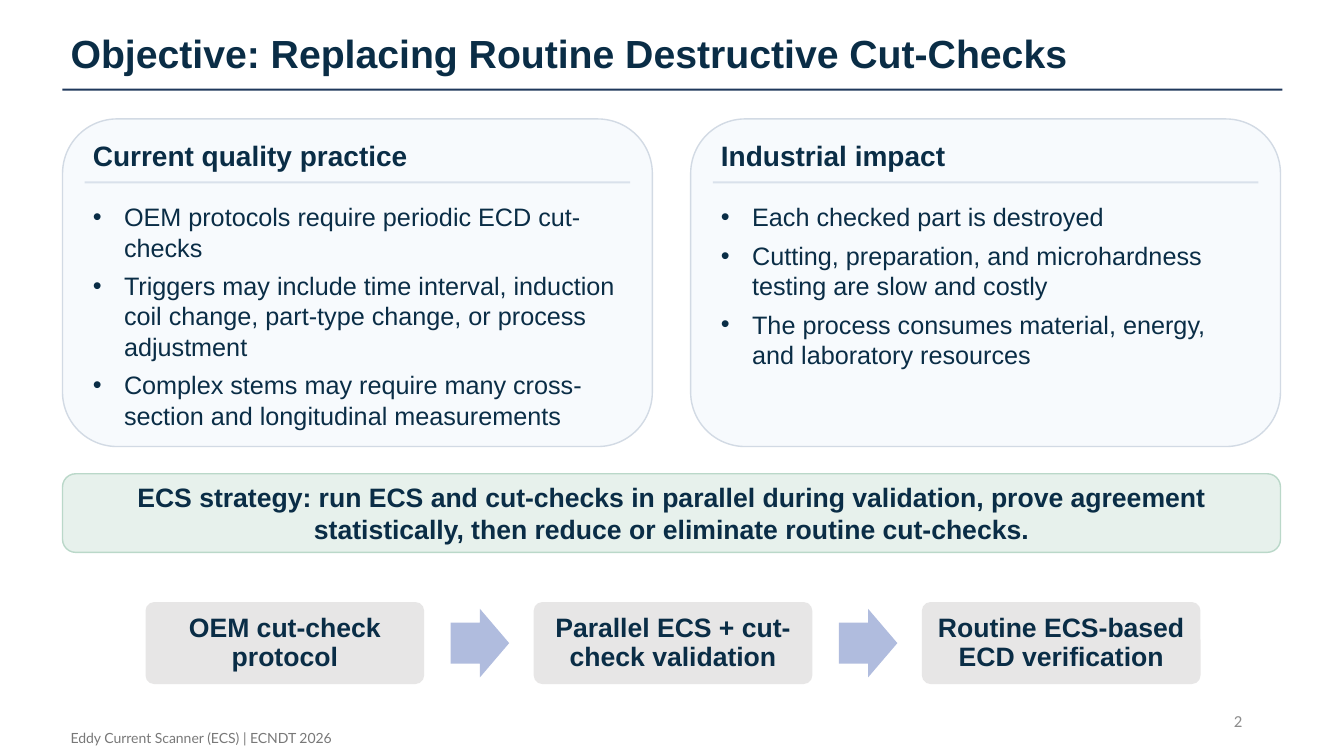
from dataclasses import dataclass

from lxml.etree import SubElement
from pptx import Presentation
from pptx.dml.color import RGBColor
from pptx.enum.shapes import MSO_SHAPE as Shape
from pptx.enum.text import MSO_ANCHOR as Anchor, MSO_AUTO_SIZE as AutoSize, PP_ALIGN as Align
from pptx.oxml.ns import qn
from pptx.util import Pt

PX = 9144  # EMU per px, 100 px to the inch
NAVY = "0A2D46"
COMPARISON_LAYOUT = 4
BULLET_INDENT = 31


@dataclass(frozen=True)
class Box:
    left: int
    top: int
    width: int
    height: int

    def emu(self) -> list[int]:
        return [v * PX for v in (self.left, self.top, self.width, self.height)]


@dataclass(frozen=True)
class Card:
    left: int
    heading_idx: int
    list_idx: int
    heading: str
    points: list[str]


CARDS = [
    Card(62, 1, 2, "Current quality practice", [
        "OEM protocols require periodic ECD cut-checks",
        "Triggers may include time interval, induction coil change, "
        "part-type change, or process adjustment",
        "Complex stems may require many cross-section and longitudinal measurements",
    ]),
    Card(685, 3, 4, "Industrial impact", [
        "Each checked part is destroyed",
        "Cutting, preparation, and microhardness testing are slow and costly",
        "The process consumes material, energy, and laboratory resources",
    ]),
]
STEPS = [
    "OEM cut-check protocol",
    "Parallel ECS + cut-check validation",
    "Routine ECS-based ECD verification",
]
STEP_LEFT, STEP_PITCH, ARROW_OFFSET = 145, 385, 302


def rgb(value: str) -> RGBColor:
    return RGBColor.from_string(value)


def set_all(target, values: dict) -> None:
    for key, value in values.items():
        setattr(target, key, value)


def write(holder, texts: list[str], size: int, color: str = NAVY, font: str = "Arial",
          bold: bool = False, align=Align.LEFT, anchor=Anchor.TOP, spacing: float = 1.0,
          after: int = 0, insets: tuple[int, int] = (8, 4), bullets: bool = False) -> None:
    """Fill a shape, text box or placeholder with formatted paragraphs."""
    frame = holder.text_frame
    side, edge = (v * PX for v in insets)
    set_all(frame, {
        "word_wrap": True, "auto_size": AutoSize.NONE, "vertical_anchor": anchor,
        "margin_left": side, "margin_right": side,
        "margin_top": edge, "margin_bottom": edge,
    })
    frame.text = "\n".join(texts)
    for paragraph in frame.paragraphs:
        set_all(paragraph, {"alignment": align, "line_spacing": spacing,
                            "space_before": Pt(0), "space_after": Pt(after)})
        if bullets:
            props = paragraph._p.get_or_add_pPr()
            props.set("marL", str(BULLET_INDENT * PX))
            props.set("indent", str(-BULLET_INDENT * PX))
            SubElement(props, qn("a:buFont")).set("typeface", "Arial")
            SubElement(props, qn("a:buChar")).set("char", "•")
        set_all(paragraph.font, {"name": font, "size": Pt(size), "bold": bold})
        paragraph.font.color.rgb = rgb(color)


def place(holder, box: Box):
    set_all(holder, dict(zip(("left", "top", "width", "height"), box.emu())))
    return holder


def add_block(slide, kind, box: Box, fill: str, line: str | None = None,
              adjustments: tuple[float, ...] = ()):
    block = slide.shapes.add_shape(kind, *box.emu())
    block.shadow.inherit = False
    block.fill.solid()
    block.fill.fore_color.rgb = rgb(fill)
    if line:
        block.line.color.rgb = rgb(line)
        block.line.width = Pt(1)
    else:
        block.line.fill.background()
    for i, value in enumerate(adjustments):
        block.adjustments[i] = value
    return block


def bring_forward(slide, holder) -> None:
    """Move a placeholder in front of everything drawn so far."""
    slide.shapes._spTree.append(holder._element)


def draw_card(slide, card: Card) -> None:
    inner_left, inner_width = card.left + 22, 541
    add_block(slide, Shape.ROUNDED_RECTANGLE, Box(card.left, 118, 585, 325), "F7FAFD", "D2DAE4")
    add_block(slide, Shape.RECTANGLE, Box(inner_left, 180, inner_width, 2), "D9E1EB")

    heading = place(slide.placeholders[card.heading_idx], Box(inner_left, 133, inner_width, 38))
    write(heading, [card.heading], 20, bold=True)
    bring_forward(slide, heading)

    points = place(slide.placeholders[card.list_idx], Box(inner_left, 196, inner_width, 230))
    write(points, card.points, 18, after=6, bullets=True)
    bring_forward(slide, points)


def draw_steps(slide) -> None:
    for i, label in enumerate(STEPS):
        left = STEP_LEFT + i * STEP_PITCH
        step = add_block(slide, Shape.ROUNDED_RECTANGLE, Box(left, 598, 275, 80),
                         "E7E6E6", "E7E6E6", (0.1,))
        write(step, [label], 19, bold=True, align=Align.CENTER, anchor=Anchor.MIDDLE,
              spacing=0.9, insets=(8, 8))
        if i < len(STEPS) - 1:
            add_block(slide, Shape.RIGHT_ARROW, Box(left + ARROW_OFFSET, 604, 58, 68),
                      "B0BCDE", adjustments=(0.6, 0.5))


def main() -> None:
    deck = Presentation()
    deck.slide_width, deck.slide_height = 1333 * PX, 750 * PX
    slide = deck.slides.add_slide(deck.slide_layouts[COMPARISON_LAYOUT])

    # Title and rule
    title = place(slide.shapes.title, Box(62, 25, 1210, 55))
    write(title, ["Objective: Replacing Routine Destructive Cut-Checks"], 28, bold=True)
    add_block(slide, Shape.RECTANGLE, Box(62, 88, 1210, 2), "1F385C")

    # Practice and impact cards
    for card in CARDS:
        draw_card(slide, card)

    # Strategy banner
    strategy = add_block(slide, Shape.ROUNDED_RECTANGLE, Box(62, 470, 1208, 78),
                         "E7F1EC", "BAD8C9")
    write(strategy, ["ECS strategy: run ECS and cut-checks in parallel during validation, prove "
                     "agreement statistically, then reduce or eliminate routine cut-checks."],
          19, bold=True, align=Align.CENTER, anchor=Anchor.MIDDLE)

    # Process steps
    draw_steps(slide)

    # Footer and page number
    footer = slide.shapes.add_textbox(*Box(62, 720, 530, 18).emu())
    write(footer, ["Eddy Current Scanner (ECS) | ECNDT 2026"], 10, "787878", "Lato")
    page_number = slide.shapes.add_textbox(*Box(942, 695, 300, 40).emu())
    write(page_number, ["2"], 12, "8C8C8C", "Calibri", align=Align.RIGHT,
          anchor=Anchor.MIDDLE, insets=(10, 5))

    deck.save("out.pptx")


if __name__ == "__main__":
    main()
